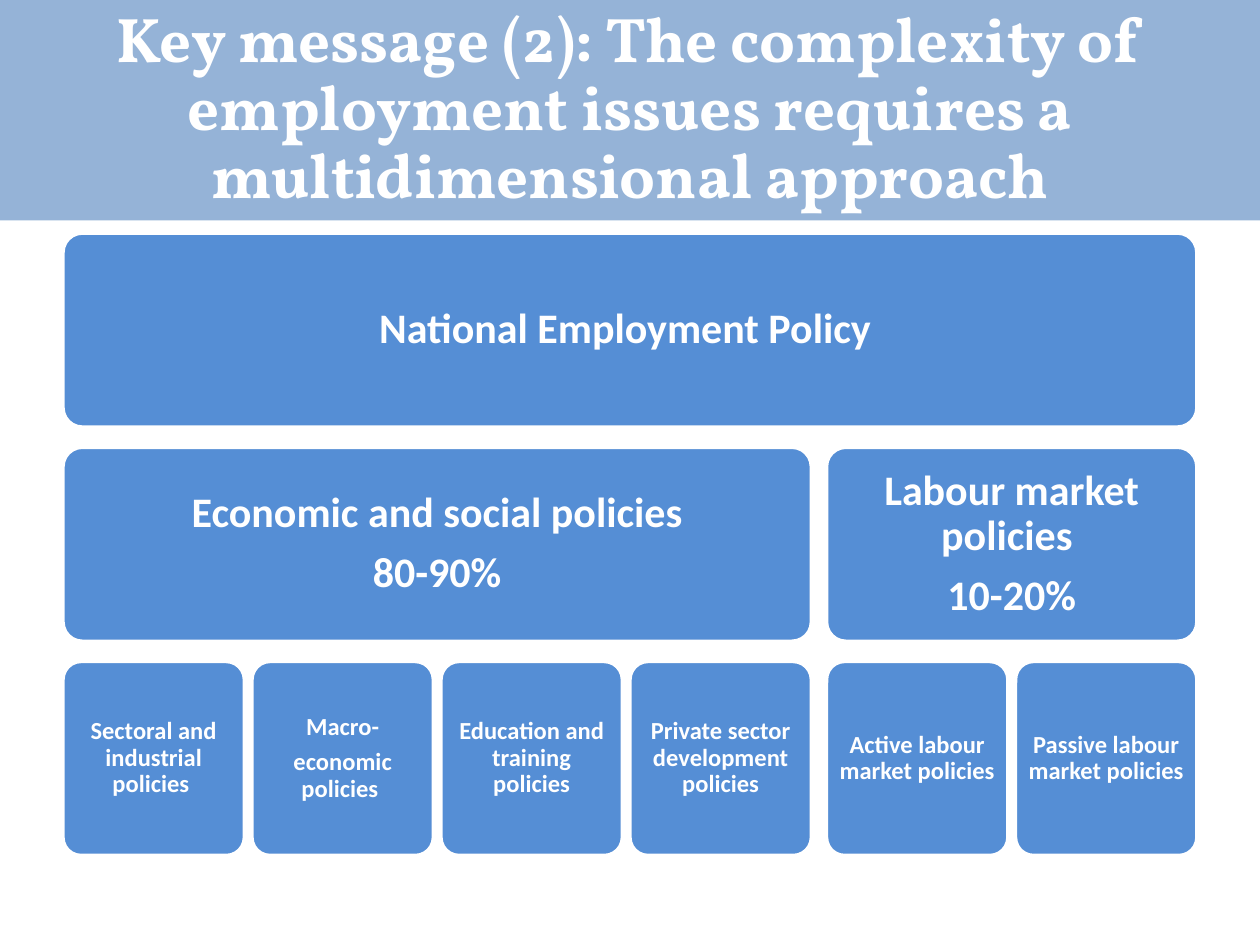
from pptx import Presentation
from pptx.dml.color import RGBColor
from pptx.enum.shapes import MSO_SHAPE as SHAPE
from pptx.enum.text import MSO_ANCHOR as ANCHOR, PP_ALIGN as ALIGN
from pptx.util import Emu, Pt

PX = 9144


def color(value):
    return RGBColor.from_string(value)


def add_panel(kind, left, top, width, height, fill, inset, lines, font, size):
    panel = slide.shapes.add_shape(kind, *[Emu(n * PX) for n in (left, top, width, height)])
    panel.shadow.inherit = False
    panel.fill.solid()
    panel.fill.fore_color.rgb = color(fill)
    frame = panel.text_frame
    frame.word_wrap = True
    frame.vertical_anchor = ANCHOR.MIDDLE
    frame.margin_left = frame.margin_right = Emu(inset * PX)
    frame.margin_top = frame.margin_bottom = Emu(inset * PX)
    for index, line in enumerate(lines):
        paragraph = frame.add_paragraph() if index else frame.paragraphs[0]
        paragraph.alignment = ALIGN.CENTER
        paragraph.line_spacing = 0.9
        run = paragraph.add_run()
        run.text = line
        run.font.name = font
        run.font.size = Pt(size)
        run.font.bold = True
        run.font.color.rgb = color("FFFFFF")
    return panel


prs = Presentation()
prs.slide_width = Emu(1000 * PX)
prs.slide_height = Emu(750 * PX)
slide = prs.slides.add_slide(prs.slide_layouts[6])

title = add_panel(
    SHAPE.RECTANGLE, 0, 0, 1000, 175, "95B3D7", 5,
    ["Key message (2): The complexity of employment issues requires a multidimensional approach"],
    "Vollkorn", 36)
title.line.fill.background()

columns = [50, 200, 350, 500, 656, 806]
column_width = 144
row_top, row_step, row_height = 185, 170, 154

policies = [
    (0, 0, 5, ["National Employment Policy "]),
    (1, 0, 3, ["Economic and social policies", "80-90%"]),
    (1, 4, 5, ["Labour market policies ", "10-20%"]),
    (2, 0, 0, ["Sectoral and industrial policies "]),
    (2, 1, 1, ["Macro-", "economic policies "]),
    (2, 2, 2, ["Education and training policies"]),
    (2, 3, 3, ["Private sector development policies"]),
    (2, 4, 4, ["Active labour market policies"]),
    (2, 5, 5, ["Passive labour market policies"]),
]

for row, first, last, lines in policies:
    left = columns[first]
    width = columns[last] + column_width - left
    size, inset = (14, 6) if row == 2 else (24, 10)
    policy = add_panel(
        SHAPE.ROUNDED_RECTANGLE, left, row_top + row * row_step, width, row_height,
        "558ED5", inset, lines, "Calibri", size)
    policy.adjustments[0] = 0.1
    policy.line.color.rgb = color("FFFFFF")
    policy.line.width = Pt(2)
    for paragraph in policy.text_frame.paragraphs:
        paragraph.space_after = Pt(size * 0.35)

prs.save("out.pptx")
